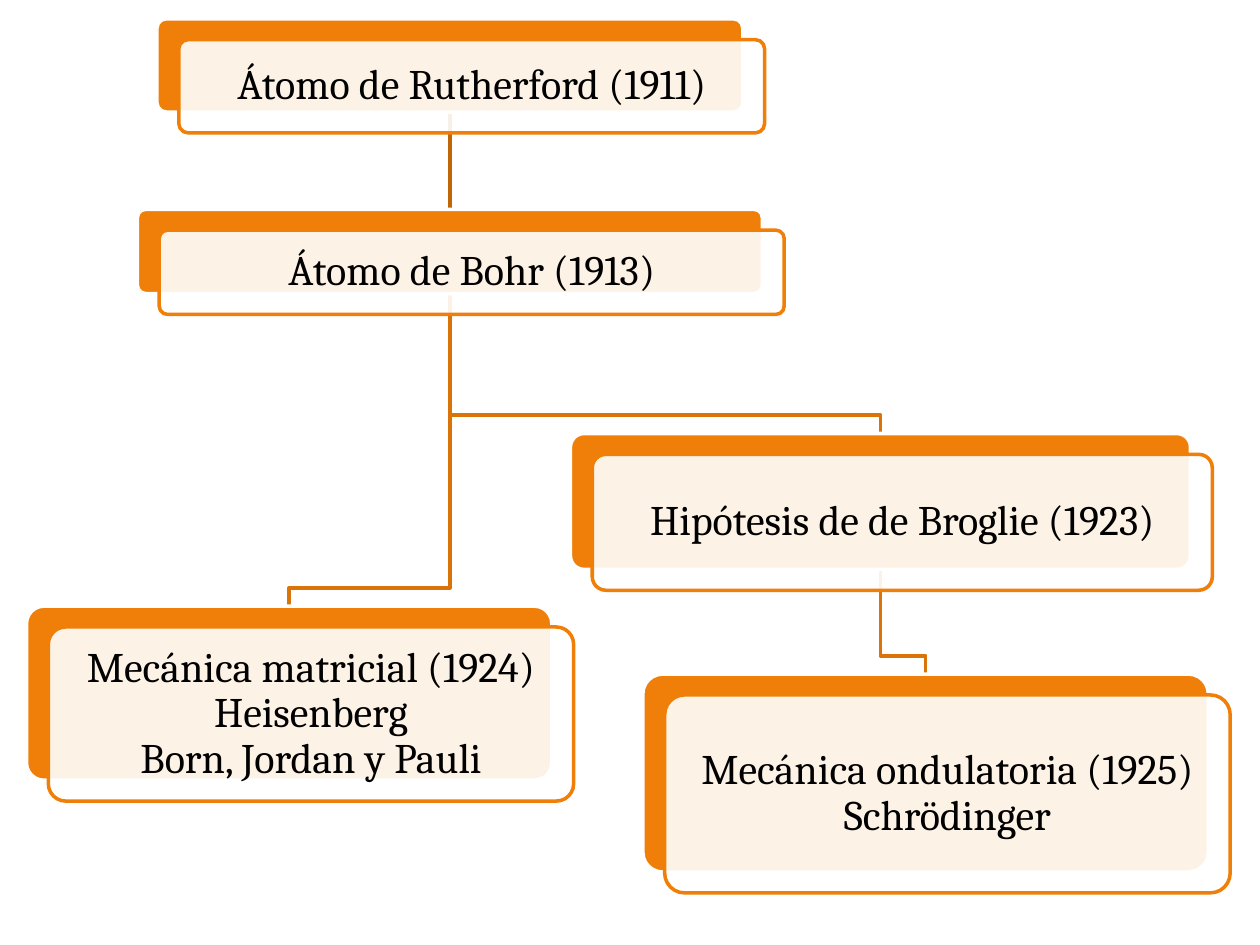
from pptx import Presentation
from pptx.dml.color import RGBColor
from pptx.enum.shapes import MSO_CONNECTOR, MSO_SHAPE
from pptx.enum.text import MSO_ANCHOR, PP_ALIGN
from pptx.oxml.ns import qn
from pptx.util import Cm, Pt
from lxml import etree

ROUNDED = MSO_SHAPE.ROUNDED_RECTANGLE
STRAIGHT = MSO_CONNECTOR.STRAIGHT
CENTER = PP_ALIGN.CENTER
MIDDLE = MSO_ANCHOR.MIDDLE
BOTTOM, TOP = 2, 0

ORANGE = "F07F09"
WHITE = "FFFFFF"
DX, DY = 0.44, 0.42  # offset of the front card
BEND = 0.37          # height of an elbow above its child

# name: centre x, top, width, height (cm), text; \v is a line break
BOXES = {
    "rutherford": (9.07, 0.38, 11.81, 1.88, "Átomo de Rutherford (1911)"),
    "bohr": (9.07, 4.22, 12.6, 1.7, "Átomo de Bohr (1913)"),
    "matricial": (5.83, 12.22, 10.59, 3.51,
                  "Mecánica matricial (1924)\vHeisenberg\vBorn, Jordan y Pauli"),
    "broglie": (17.75, 8.74, 12.5, 2.74, "Hipótesis de de Broglie (1923)"),
    "ondulatoria": (18.66, 13.59, 11.4, 3.99,
                    "Mecánica ondulatoria (1925)\vSchrödinger"),
}
ELBOWS = [("broglie", "ondulatoria"), ("bohr", "broglie"), ("bohr", "matricial")]


def style_line(shape, color):
    shape.line.color.rgb = RGBColor.from_string(color)
    shape.line.width = Pt(2)


def add_card(x, y, w, h, fill, line):
    s = shapes.add_shape(ROUNDED, Cm(x), Cm(y), Cm(w), Cm(h))
    s.adjustments[0] = 0.1
    s.shadow.inherit = False
    s.fill.solid()
    s.fill.fore_color.rgb = RGBColor.from_string(fill)
    style_line(s, line)
    return s


prs = Presentation()
prs.slide_width, prs.slide_height = Cm(25.4), Cm(19.05)
shapes = prs.slides.add_slide(prs.slide_layouts[6]).shapes

# Elbow lines, behind the cards
for parent, child in ELBOWS:
    px, ptop, _, ph, _ = BOXES[parent]
    cx, ctop = BOXES[child][:2]
    bend = ctop - BEND
    fb = shapes.build_freeform(Cm(px), Cm(ptop + ph))
    points = [(px, bend), (cx, bend), (cx, ctop)]
    fb.add_line_segments([(Cm(x), Cm(y)) for x, y in points], close=False)
    s = fb.convert_to_shape()
    s.fill.background()
    s.shadow.inherit = False
    style_line(s, "DA7308")

# Straight line, joined once its two cards exist
link = shapes.add_connector(STRAIGHT, 0, 0, 0, 0)
style_line(link, "C06607")
etree.SubElement(link._element.spPr, qn("a:effectLst"))

# Cards: an orange one behind, a translucent white one with the text in front
backs = {}
for name, (cx, top, w, h, text) in BOXES.items():
    left = cx - w / 2
    backs[name] = add_card(left, top, w, h, ORANGE, WHITE)
    front = add_card(left + DX, top + DY, w, h, WHITE, ORANGE)
    color = front.fill._xPr.find(qn("a:solidFill"))[0]
    etree.SubElement(color, qn("a:alpha"), val="90000")

    tf = front.text_frame
    tf.word_wrap = True
    tf.vertical_anchor = MIDDLE
    tf.margin_left = tf.margin_right = Cm(0.3)
    tf.margin_top = tf.margin_bottom = Cm(0.3)
    p = tf.paragraphs[0]
    p.text = text
    p.alignment = CENTER
    p.line_spacing = 0.9
    for r in p.runs:
        r.font.name = "Cambria"
        r.font.size = Pt(24)
        r.font.color.rgb = RGBColor.from_string("000000")

link.begin_connect(backs["rutherford"], BOTTOM)
link.end_connect(backs["bohr"], TOP)

prs.save("out.pptx")
